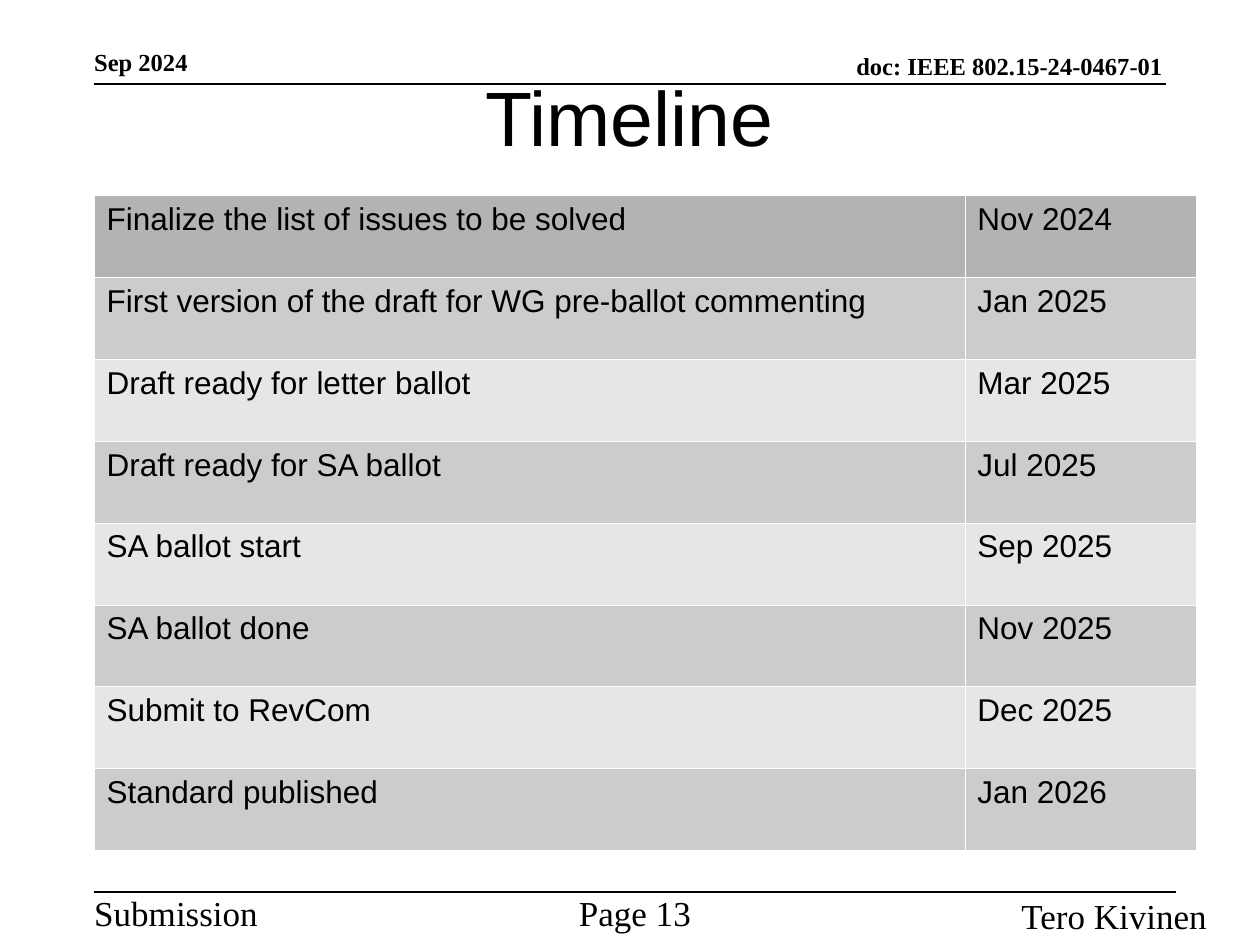
import pptx
import pptx.dml.color
import pptx.enum.shapes
import pptx.enum.text
import pptx.oxml
import pptx.oxml.ns
import pptx.util

Cm = pptx.util.Cm
Pt = pptx.util.Pt
ALIGN = pptx.enum.text.PP_ALIGN
ANCHOR = pptx.enum.text.MSO_ANCHOR
SMALL = {"name": "Times New Roman", "size": Pt(14), "bold": True}
LARGE = {"name": "Times New Roman", "size": Pt(20), "bold": False}
HEAD = {"name": "Arial", "size": Pt(44), "bold": False}
CELL = {"name": "Arial", "size": Pt(18), "bold": False}
FLAT = dict.fromkeys(("margin_left", "margin_top", "margin_right", "margin_bottom"), 0)
STEPS = [
    ("Finalize the list of issues to be solved", "Nov 2024"),
    ("First version of the draft for WG pre-ballot commenting", "Jan 2025"),
    ("Draft ready for letter ballot", "Mar 2025"),
    ("Draft ready for SA ballot", "Jul 2025"),
    ("SA ballot start", "Sep 2025"),
    ("SA ballot done", "Nov 2025"),
    ("Submit to RevCom", "Dec 2025"),
    ("Standard published", "Jan 2026"),
]


def color(code):
    return pptx.dml.color.RGBColor.from_string(code)


def apply(item, form):
    for key, value in form.items():
        setattr(item, key, value)


def write(frame, text, form, align, anchor):
    apply(frame, {**FLAT, "word_wrap": True, "vertical_anchor": anchor,
                  "auto_size": pptx.enum.text.MSO_AUTO_SIZE.NONE})
    frame.text = text
    para = frame.paragraphs[0]
    para.alignment = align
    apply(para.runs[0].font, form)
    para.runs[0].font.color.rgb = color("000000")


def label(slide, box, text, form, align, anchor):
    shape = slide.shapes.add_textbox(*map(Cm, box))
    write(shape.text_frame, text, form, align, anchor)


def rule(slide, left, top, width):
    line = slide.shapes.add_connector(
        pptx.enum.shapes.MSO_CONNECTOR.STRAIGHT,
        Cm(left), Cm(top), Cm(left + width), Cm(top))
    line.line.width = Pt(1)
    line.line.color.rgb = color("000000")
    line._element.spPr.append(pptx.oxml.parse_xml(
        f"<a:effectLst {pptx.oxml.ns.nsdecls('a')}/>"))


def header(slide, left, top, width, height):
    label(slide, (left, top, 7.09, 0.53), "Sep 2024",
          SMALL, ALIGN.LEFT, ANCHOR.BOTTOM)
    label(slide, (left + 6.71, top + 0.07, 14.83, 0.53),
          "doc: IEEE 802.15-24-0467-01", SMALL, ALIGN.RIGHT, ANCHOR.BOTTOM)
    rule(slide, left, top + height, width)


def title(slide, left, top, width, height):
    shape = slide.shapes.title
    apply(shape, {"left": Cm(left), "top": Cm(top),
                  "width": Cm(width), "height": Cm(height)})
    write(shape.text_frame, "Timeline", HEAD, ALIGN.CENTER, ANCHOR.MIDDLE)


def edge(cell):
    props = cell._tc.get_or_add_tcPr()
    for spot, side in enumerate(("lnL", "lnR", "lnT", "lnB")):
        props.insert(spot, pptx.oxml.parse_xml(
            f'<a:{side} {pptx.oxml.ns.nsdecls("a")} w="762"><a:solidFill>'
            f'<a:srgbClr val="FFFFFF"/></a:solidFill></a:{side}>'))


def dates(slide, left, top, width, height):
    table = slide.shapes.add_table(
        len(STEPS), 2, Cm(left), Cm(top), Cm(width), Cm(height)).table
    apply(table, {"first_row": False, "horz_banding": False})
    for col, share in zip(table.columns, (0.79, 0.21)):
        col.width = Cm(width * share)
    for row, step in enumerate(STEPS):
        table.rows[row].height = Cm(height / len(STEPS))
        shade = "B3B3B3" if row == 0 else ("E6E6E6", "CCCCCC")[row % 2]
        for col, text in enumerate(step):
            cell = table.cell(row, col)
            cell.text = text
            apply(cell, {"margin_left": Cm(0.25), "margin_right": Cm(0.25),
                         "margin_top": Cm(0.13), "margin_bottom": Cm(0.13)})
            cell.fill.solid()
            cell.fill.fore_color.rgb = color(shade)
            font = cell.text_frame.paragraphs[0].runs[0].font
            apply(font, CELL)
            font.color.rgb = color("000000")
            edge(cell)


def footer(slide, left, top, width, height):
    rule(slide, left, top, width)
    for shift, drop, text, align in (
            (0, 0, "Submission", ALIGN.LEFT),
            (8.51, 0, "Page 13", ALIGN.CENTER),
            (17.65, 0.05, "Tero Kivinen", ALIGN.RIGHT)):
        label(slide, (left + shift, top + drop, 4.78, height),
              text, LARGE, align, ANCHOR.TOP)


def main():
    deck = pptx.Presentation()
    apply(deck, {"slide_width": Cm(25.4), "slide_height": Cm(19.05)})
    slide = deck.slides.add_slide(deck.slide_layouts[5])
    header(slide, 1.9, 1.02, 21.6, 0.68)
    footer(slide, 1.9, 17.98, 21.8, 0.79)
    title(slide, 1.27, 0.76, 22.83, 3.15)
    dates(slide, 1.9, 3.94, 22.22, 13.2)
    deck.save("out.pptx")


if __name__ == "__main__":
    main()
